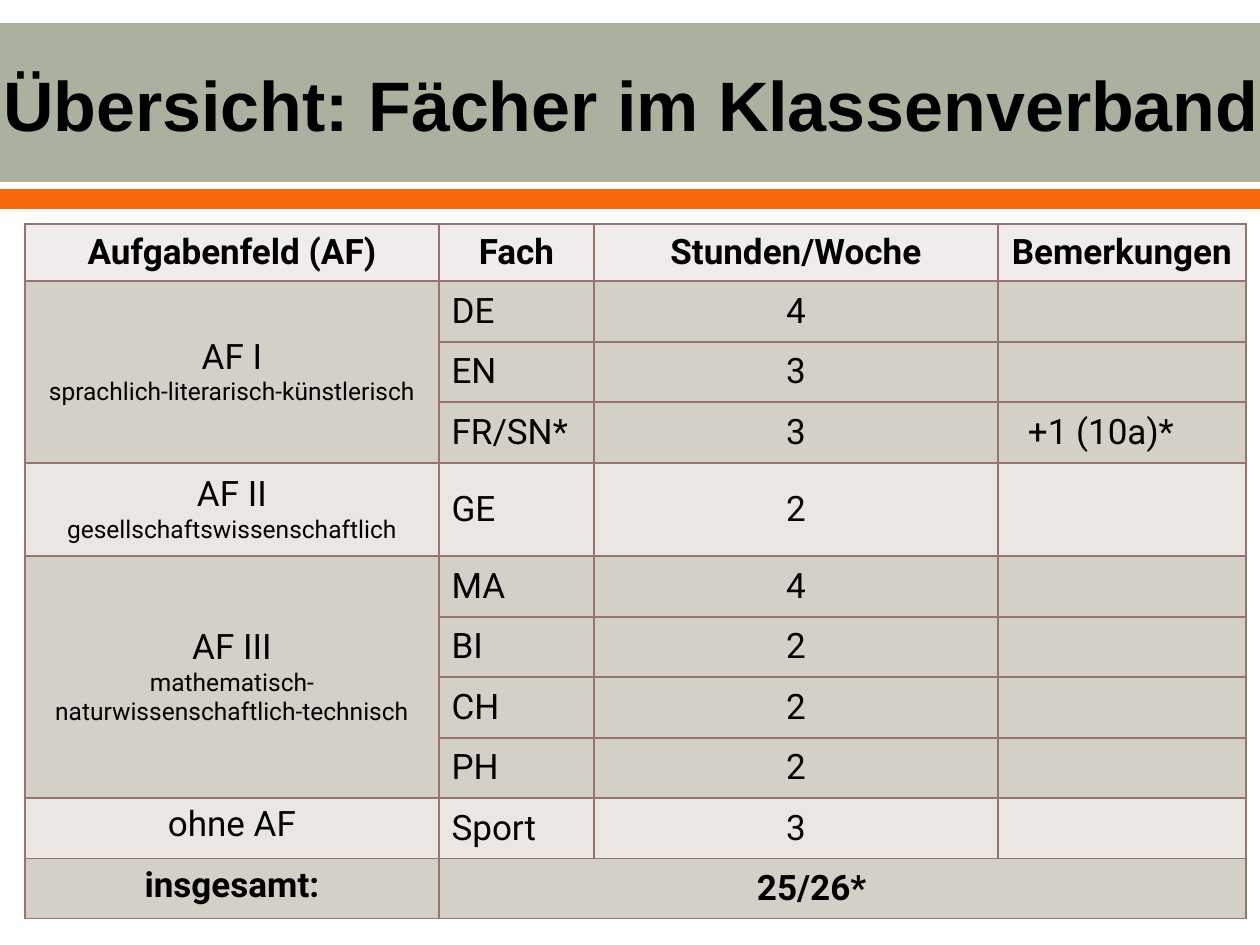
"""Build the overview slide of subjects taught in the class group."""
import pptx
import pptx.dml.color
import pptx.enum.shapes
import pptx.enum.text
import pptx.oxml
import pptx.oxml.ns
import pptx.util

SCALE = 914400 / 126
HUES = {
    "sage": "ABB19F", "orange": "F4680B", "head": "EFECEB", "dark": "D4CFC7",
    "light": "EAE7E3", "line": "96756C", "black": "000000", "white": "FFFFFF",
}
COLS = [414, 155, 404, 248]
ROWS = [57, 61, 60, 61, 93, 61, 60, 61, 60, 61, 60]
HEADS = ["Aufgabenfeld (AF)", "Fach", "Stunden/Woche", "Bemerkungen"]
FIELDS = [
    ("AF I", "sprachlich-literarisch-künstlerisch", "dark",
     [("DE", "4", ""), ("EN", "3", ""), ("FR/SN*", "3", "+1 (10a)*")]),
    ("AF II", "gesellschaftswissenschaftlich", "light", [("GE", "2", "")]),
    ("AF III", "mathematisch-naturwissenschaftlich-technisch", "dark",
     [("MA", "4", ""), ("BI", "2", ""), ("CH", "2", ""), ("PH", "2", "")]),
    ("ohne AF", "", "light", [("Sport", "3", "")]),
]
ALIGN = pptx.enum.text.PP_ALIGN
ANCHOR = pptx.enum.text.MSO_ANCHOR


def emu(px):
    """Turn px into EMU."""
    return pptx.util.Emu(round(px * SCALE))


def rgb(hue):
    """Look up a colour by name."""
    return pptx.dml.color.RGBColor.from_string(HUES[hue])


def line(tag, hue, width):
    """Make a line element of the given tag, colour and width in points."""
    return pptx.oxml.parse_xml(
        f'<a:{tag} {pptx.oxml.ns.nsdecls("a")} w="{pptx.util.Pt(width)}">'
        f'<a:solidFill><a:srgbClr val="{HUES[hue]}"/></a:solidFill></a:{tag}>')


class Deck:
    """Hold the style and the current slide."""

    def __init__(self, width, height):
        self.font = "Roboto"
        self.size = 20
        self.show = pptx.Presentation()
        self.show.slide_width = emu(width)
        self.show.slide_height = emu(height)
        self.slide = self.show.slides.add_slide(self.show.slide_layouts[5])

    def run(self, para, text, size=None, bold=False, font=None):
        """Add one styled run to a paragraph."""
        run = para.add_run()
        run.text = text
        run.font.name = font or self.font
        run.font.size = pptx.util.Pt(size or self.size)
        run.font.bold = bold
        run.font.color.rgb = rgb("black")
        return run

    def title(self, text, left, top, width, height):
        """Place and fill the title."""
        box = self.slide.shapes.title
        box.left, box.top = emu(left), emu(top)
        box.width, box.height = emu(width), emu(height)
        box.text_frame.vertical_anchor = ANCHOR.MIDDLE
        para = box.text_frame.paragraphs[0]
        para.alignment = ALIGN.CENTER
        run = self.run(para, text, 40, True, "Arial")
        run.font.fill.solid()
        run.font.color.rgb = rgb("black")
        run.font._element.insert(0, line("ln", "white", 1.1))

    def band(self, top, height, hue):
        """Add a full-width band behind the title."""
        kind = pptx.enum.shapes.MSO_SHAPE.RECTANGLE
        band = self.slide.shapes.add_shape(
            kind, 0, emu(top), self.show.slide_width, emu(height))
        band.shadow.inherit = False
        band.fill.solid()
        band.fill.fore_color.rgb = rgb(hue)
        band.line.fill.background()
        band.element.getparent().insert(2, band.element)

    def table(self, left, top, cols, rows):
        """Add a bordered table without banding."""
        grid = self.slide.shapes.add_table(
            len(rows), len(cols), emu(left), emu(top),
            emu(sum(cols)), emu(sum(rows))).table
        grid.first_row = grid.horz_banding = False
        for col, width in zip(grid.columns, cols):
            col.width = emu(width)
        for row, height in zip(grid.rows, rows):
            row.height = emu(height)
        for cell in grid.iter_cells():
            props = cell._tc.get_or_add_tcPr()
            for spot, tag in enumerate(("lnL", "lnR", "lnT", "lnB")):
                props.insert(spot, line(tag, "line", 1))
        return grid

    def cell(self, cell, hue, text="", note="", bold=False,
             align=ALIGN.CENTER, anchor=ANCHOR.MIDDLE, inset=None):
        """Fill a cell with text and an optional small second line."""
        cell.fill.solid()
        cell.fill.fore_color.rgb = rgb(hue)
        cell.vertical_anchor = anchor
        if inset:
            cell.margin_left = emu(inset)
        frame = cell.text_frame
        para = frame.paragraphs[0]
        para.alignment = align
        if text:
            self.run(para, text, bold=bold)
        if note:
            para = frame.add_paragraph()
            para.alignment = align
            self.run(para, note, 14)


def main():
    """Build and save the slide."""
    deck = Deck(1260, 945)
    deck.band(23, 159, "sage")
    deck.band(189, 20, "orange")
    deck.title("Übersicht: Fächer im Klassenverband", -44, 36, 1350, 135)
    grid = deck.table(25, 224, COLS, ROWS)
    for col, head in enumerate(HEADS):
        deck.cell(grid.cell(0, col), "head", head, bold=True)
    row = 1
    for name, note, hue, items in FIELDS:
        first = grid.cell(row, 0)
        if len(items) > 1:
            first.merge(grid.cell(row + len(items) - 1, 0))
        deck.cell(first, hue, name, note,
                  anchor=ANCHOR.MIDDLE if note else ANCHOR.TOP)
        for item, hours, remark in items:
            deck.cell(grid.cell(row, 1), hue, item, align=ALIGN.LEFT)
            deck.cell(grid.cell(row, 2), hue, hours)
            deck.cell(grid.cell(row, 3), hue, remark,
                      align=ALIGN.LEFT, inset=30)
            row += 1
    deck.cell(grid.cell(row, 0), "dark", "insgesamt:", bold=True,
              anchor=ANCHOR.TOP)
    total = grid.cell(row, 1)
    total.merge(grid.cell(row, 3))
    deck.cell(total, "dark", "25/26*", bold=True, align=ALIGN.LEFT, inset=318)
    deck.show.save("out.pptx")


if __name__ == "__main__":
    main()
